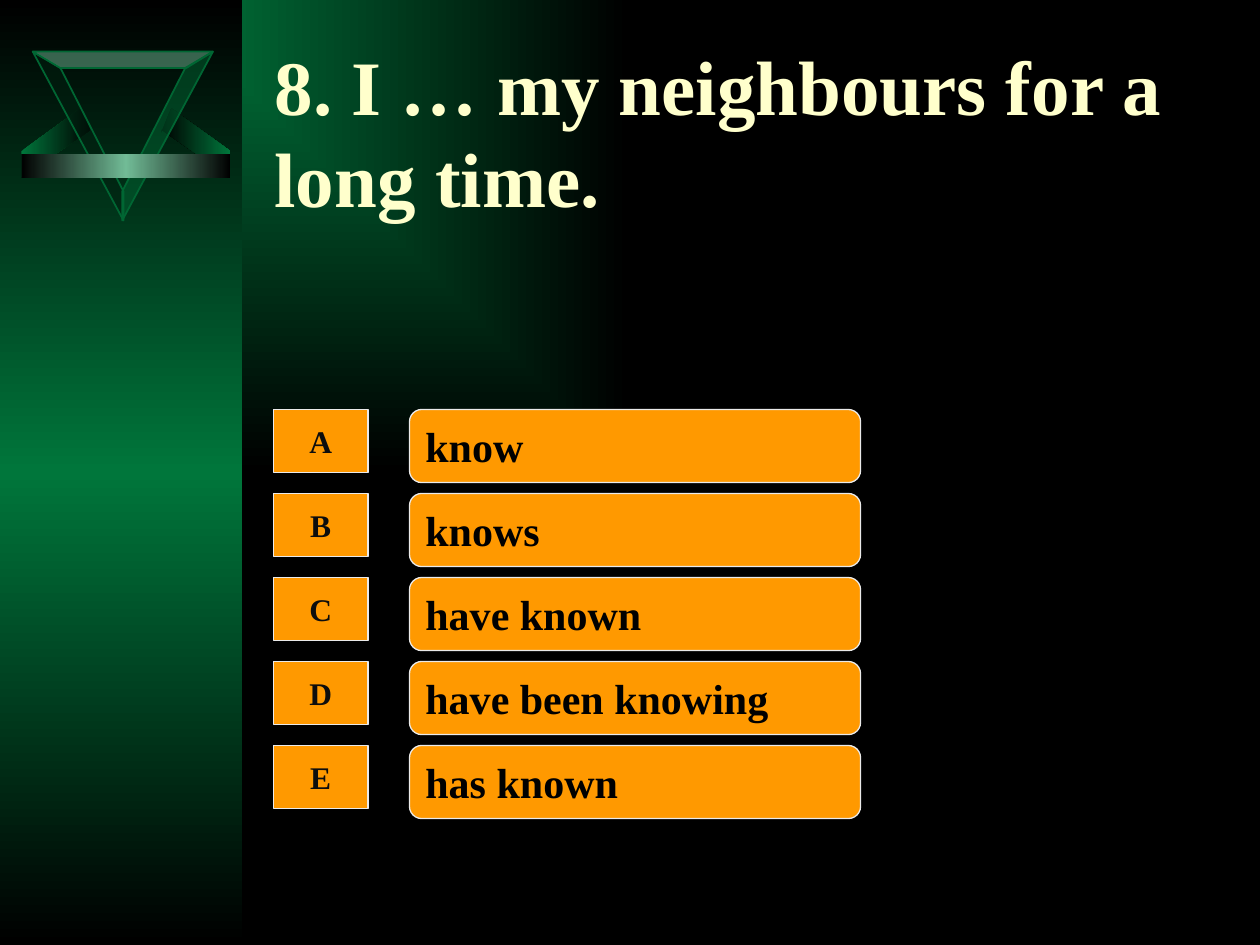
import pptx
import pptx.dml.color
import pptx.enum.shapes
import pptx.enum.text
import pptx.oxml
import pptx.oxml.ns
import pptx.util
from lxml import etree

Inches = pptx.util.Inches
Pt = pptx.util.Pt
RGBColor = pptx.dml.color.RGBColor
MSO_SHAPE = pptx.enum.shapes.MSO_SHAPE
PP_ALIGN = pptx.enum.text.PP_ALIGN
MSO_ANCHOR = pptx.enum.text.MSO_ANCHOR
qn = pptx.oxml.ns.qn

BLACK = RGBColor(0x00, 0x00, 0x00)
NEAR_BLACK = RGBColor(0x0D, 0x0D, 0x0D)
GREEN = RGBColor(0x00, 0x76, 0x3B)
EDGE_GREEN = RGBColor(0x00, 0x66, 0x33)
DARK_GREEN = RGBColor(0x00, 0x20, 0x10)
MINT = RGBColor(0x71, 0xBB, 0x96)
CREAM = RGBColor(0xFF, 0xFF, 0xCC)
ORANGE = RGBColor(0xFF, 0x99, 0x00)
PALE_GREY = RGBColor(0xEA, 0xEA, 0xEA)

ANSWERS = ["know", "knows", "have known", "have been knowing", "has known"]
FIRST_TOP = 3.25
ROW_STEP = 2 / 3


def mirrored(points, width):
    return [(width - x, y) for x, y in points]


class QuizSlide:
    font = "Times New Roman"

    def __init__(self, slide):
        self.slide = slide

    def gradient(self, fill, owner, colours, angle=None):
        """Spread colours evenly; without an angle they run from the top left corner."""
        fill.gradient()
        grad = next(owner.iter(qn("a:gradFill")))
        for child in list(grad):
            grad.remove(child)
        stops = etree.SubElement(grad, qn("a:gsLst"))
        for i, colour in enumerate(colours):
            position = 100000 * i // (len(colours) - 1)
            stop = etree.SubElement(stops, qn("a:gs"), pos=str(position))
            etree.SubElement(stop, qn("a:srgbClr"), val=str(colour))
        if angle is None:
            route = etree.SubElement(grad, qn("a:path"))
            route.set("path", "rect")
            etree.SubElement(route, qn("a:fillToRect"), r="100000", b="100000")
        else:
            etree.SubElement(grad, qn("a:lin"), ang=str(angle * 60000), scaled="1")

    def background(self, colours):
        self.gradient(self.slide.background.fill, self.slide.element, colours)

    def add_text(self, frame, text, size, colour, align):
        paragraph = frame.paragraphs[0]
        paragraph.alignment = align
        run = paragraph.add_run()
        run.text = text
        run.font.name = self.font
        run.font.size = Pt(size)
        run.font.bold = True
        run.font.color.rgb = colour

    def title(self, text, left, top, width, height):
        heading = self.slide.shapes.title
        heading.left, heading.top = Inches(left), Inches(top)
        heading.width, heading.height = Inches(width), Inches(height)
        heading.text_frame.vertical_anchor = MSO_ANCHOR.MIDDLE
        self.add_text(heading.text_frame, text, 44, CREAM, PP_ALIGN.LEFT)

    def shape(self, preset, left, top, width, height):
        shape = self.slide.shapes.add_shape(
            preset, Inches(left), Inches(top), Inches(width), Inches(height))
        shape.shadow.inherit = False
        return shape

    def band(self, left, top, width, height, colours, angle):
        band = self.shape(MSO_SHAPE.RECTANGLE, left, top, width, height)
        self.gradient(band.fill, band.element, colours, angle)
        band.line.fill.background()

    def outline(self, points):
        corners = [(Inches(x), Inches(y)) for x, y in points]
        builder = self.slide.shapes.build_freeform(*corners[0])
        builder.add_line_segments(corners[1:], close=True)
        shape = builder.convert_to_shape()
        shape.shadow.inherit = False
        return shape

    def wing(self, points, colours):
        wing = self.outline(points)
        self.gradient(wing.fill, wing.element, colours, 0)
        wing.line.fill.background()

    def glass_edge(self, points, colour):
        """Half-transparent side of the emblem's triangle."""
        edge = self.outline(points)
        edge.fill.solid()
        edge.fill.fore_color.rgb = colour
        tint = next(edge.element.iter(qn("a:srgbClr")))
        etree.SubElement(tint, qn("a:alpha"), val="50000")
        edge.line.color.rgb = EDGE_GREEN
        edge.line.width = Pt(1)

    def button(self, preset, box, text, size, colour, align):
        button = self.shape(preset, *box)
        button.fill.solid()
        button.fill.fore_color.rgb = ORANGE
        button.line.color.rgb = PALE_GREY
        button.line.width = Pt(0.75)
        frame = button.text_frame
        frame.word_wrap = False
        frame.vertical_anchor = MSO_ANCHOR.MIDDLE
        self.add_text(frame, text, size, colour, align)

    def emblem(self):
        right_wing = [(1.83, 1.2), (1.83, 1.41), (1.28, 1.03),
                      (1.28, 1.05), (1.36, 0.86)]
        self.wing(right_wing, [BLACK, GREEN])
        self.wing(mirrored(right_wing, 2), [GREEN, BLACK])
        left_edge = [(0.98, 1.75), (0.98, 1.52), (0.48, 0.54), (0.26, 0.41)]
        self.glass_edge(left_edge, DARK_GREEN)
        self.glass_edge([(0.26, 0.41), (0.48, 0.54), (1.48, 0.54), (1.69, 0.41)], MINT)
        self.glass_edge(mirrored(left_edge, 1.95), EDGE_GREEN)
        self.band(0.17, 1.22, 1.66, 0.19, [BLACK, MINT, BLACK], 0)

    def answer(self, letter, text, top):
        self.button(MSO_SHAPE.ROUNDED_RECTANGLE, (3.25, top, 3.58, 0.58),
                    text, 24, BLACK, PP_ALIGN.LEFT)
        self.button(MSO_SHAPE.ACTION_BUTTON_CUSTOM, (2.17, top, 0.75, 0.5),
                    letter, 18, NEAR_BLACK, PP_ALIGN.CENTER)


def main():
    deck = pptx.Presentation()
    deck.slide_width, deck.slide_height = Inches(10), Inches(7.5)
    quiz = QuizSlide(deck.slides.add_slide(deck.slide_layouts[5]))
    quiz.background([GREEN, BLACK])
    quiz.band(0, 0, 1.92, 7.5, [BLACK, GREEN, BLACK], 90)
    quiz.emblem()
    quiz.title("8. I … my neighbours for a long time.", 2.08, 0.25, 7.75, 1.58)
    for row, (letter, text) in enumerate(zip("ABCDE", ANSWERS)):
        quiz.answer(letter, text, FIRST_TOP + row * ROW_STEP)
    deck.save("out.pptx")


if __name__ == "__main__":
    main()
